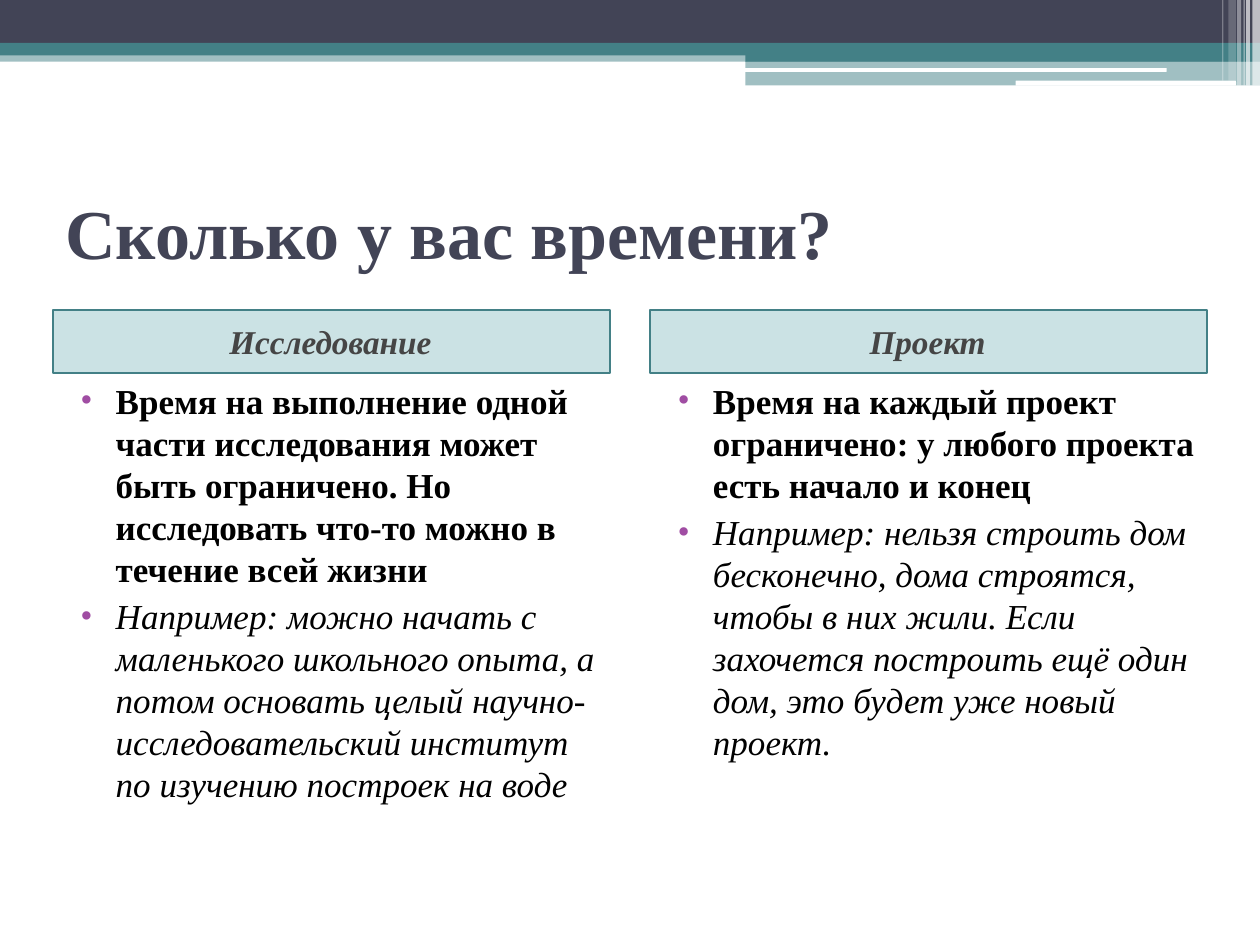
from lxml import etree
from pptx import Presentation
from pptx import util as u
from pptx.dml.color import RGBColor
from pptx.enum import shapes, text
from pptx.oxml import ns

COLORS = {
    "navy": "424456", "teal": "438086", "panel": "328E97", "white": "FFFFFF",
    "heading": "454545", "body": "000000", "bullet": "A04DA3",
}
FONT = "Times New Roman"


def color(name):
    return RGBColor.from_string(COLORS[name])


def write(paragraph, content, size=20, ink="body", bold=False, italic=False,
          align=text.PP_ALIGN.LEFT, before=0):
    paragraph.alignment = align
    paragraph.space_before = u.Pt(before)
    run = paragraph.add_run()
    run.text = content
    font = run.font
    font.name, font.size, font.bold, font.italic = FONT, u.Pt(size), bold, italic
    font.color.rgb = color(ink)


class SlideBuilder:
    def __init__(self, presentation):
        self.slide = presentation.slides.add_slide(presentation.slide_layouts[6])

    def block(self, left, top, width, height, fill, alpha=100, line=None, rounded=False):
        kind = shapes.MSO_SHAPE.ROUNDED_RECTANGLE if rounded else shapes.MSO_SHAPE.RECTANGLE
        shape = self.slide.shapes.add_shape(
            kind, u.Pt(left), u.Pt(top), u.Pt(width), u.Pt(height))
        shape.shadow.inherit = False
        shape.fill.solid()
        shape.fill.fore_color.rgb = color(fill)
        if alpha < 100:
            hue = shape.fill._xPr.find(ns.qn("a:solidFill"))[0]
            etree.SubElement(hue, ns.qn("a:alpha"), val=str(alpha * 1000))
        if line:
            shape.line.color.rgb = color(line)
            shape.line.width = u.Pt(1)
        else:
            shape.line.fill.background()
        return shape

    def text_box(self, left, top, width, height, anchor=text.MSO_ANCHOR.TOP):
        box = self.slide.shapes.add_textbox(u.Pt(left), u.Pt(top), u.Pt(width), u.Pt(height))
        frame = box.text_frame
        frame.word_wrap = True
        frame.vertical_anchor = anchor
        return frame

    def title(self, content):
        frame = self.text_box(30.24, 90, 660.24, 84.24, text.MSO_ANCHOR.MIDDLE)
        write(frame.paragraphs[0], content, size=40, ink="navy", bold=True)

    def heading(self, left, content):
        shape = self.block(left, 177.12, 318.24, 36, "panel", 25, line="teal")
        frame = shape.text_frame
        frame.vertical_anchor = text.MSO_ANCHOR.MIDDLE
        paragraph = frame.paragraphs[0]
        write(paragraph, content, size=19, ink="heading", bold=True, italic=True,
              align=text.PP_ALIGN.CENTER, before=3)
        paragraph._p.get_or_add_pPr().set("marL", str(u.Pt(3.6)))

    def bullet(self, paragraph):
        properties = paragraph._p.get_or_add_pPr()
        properties.set("marL", str(u.Pt(28.8)))
        properties.set("indent", str(u.Pt(-20.16)))
        hue = etree.SubElement(properties, ns.qn("a:buClr"))
        etree.SubElement(hue, ns.qn("a:srgbClr"), val=COLORS["bullet"])
        etree.SubElement(properties, ns.qn("a:buFont"), typeface=FONT)
        etree.SubElement(properties, ns.qn("a:buChar"), char="•")

    def column(self, left, heading, statement, example):
        self.heading(left, heading)
        frame = self.text_box(left, 213.12, 318.24, 306)
        write(frame.paragraphs[0], statement, bold=True, before=3)
        write(frame.add_paragraph(), example, italic=True, before=3)
        for paragraph in frame.paragraphs:
            self.bullet(paragraph)

    def banner(self):
        self.block(0, 28.8, 720, 6.48, "teal", 50)
        self.block(0, 0, 720, 24.48, "navy")
        self.block(0, 24.48, 720, 7.2, "teal")
        self.block(426, 28.08, 294, 7.2, "teal")
        self.block(426, 34.9, 294, 14, "teal", 50)
        for left, top, width, height in ((425.5, 38.9, 241.2, 2.2), (580.3, 46.1, 126, 2.9)):
            self.block(left, top, width, height, "white", rounded=True)
        stripes = (
            (715.7, 4.3, 49, 65), (712.1, 2.2, 49, 65), (710.6, 0.72, 49, 60),
            (707, 2.2, 49, 40), (702, 4.3, 46.1, 20), (698.4, 0.72, 46.1, 30),
        )
        for left, width, height, alpha in stripes:
            self.block(left, 0, width, height, "white", alpha)


def main():
    presentation = Presentation()
    presentation.slide_width, presentation.slide_height = u.Pt(720), u.Pt(540)
    builder = SlideBuilder(presentation)
    builder.banner()
    builder.title("Сколько у вас времени?")
    builder.column(
        30.24, "Исследование ",
        "Время на выполнение одной части исследования может быть ограничено. "
        "Но исследовать что-то можно в течение всей жизни",
        "Например: можно начать с маленького школьного опыта, а потом основать "
        "целый научно-исследовательский институт по изучению построек на воде")
    builder.column(
        371.52, "Проект ",
        "Время на каждый проект ограничено: у любого проекта есть начало и конец",
        "Например: нельзя строить дом бесконечно, дома строятся, чтобы в них жили. "
        "Если захочется построить ещё один дом, это будет уже новый проект.")
    presentation.save("out.pptx")


if __name__ == "__main__":
    main()
